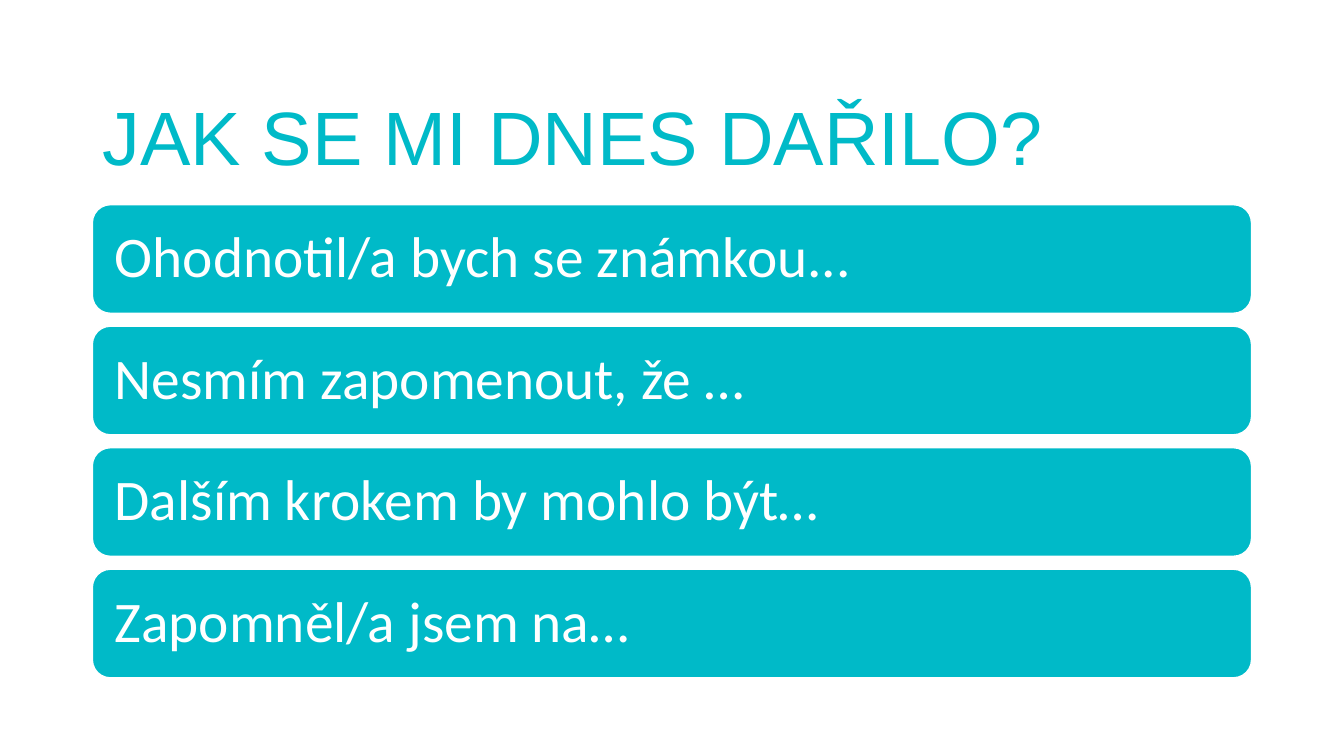
import pptx
import pptx.dml.color
import pptx.enum.shapes
import pptx.enum.text
import pptx.util

Pt = pptx.util.Pt
COLORS = {"teal": "00BAC8", "white": "FFFFFF"}
LEFT, WIDTH = 66, 828
BAR_TOP, BAR_HEIGHT, BAR_STEP = 146.2, 77.6, 86.8
PROMPTS = [
    "Ohodnotil/a bych se známkou...",
    "Nesmím zapomenout, že …",
    "Dalším krokem by mohlo být…",
    "Zapomněl/a jsem na…",
]


def color(name):
    return pptx.dml.color.RGBColor.from_string(COLORS[name])


def write_text(shape, text, font_name, size, color_name, anchor):
    frame = shape.text_frame
    frame.auto_size = pptx.enum.text.MSO_AUTO_SIZE.NONE
    frame.word_wrap = True
    frame.vertical_anchor = anchor
    frame.text = text
    paragraph = frame.paragraphs[0]
    paragraph.alignment = pptx.enum.text.PP_ALIGN.LEFT
    paragraph.line_spacing = 0.9
    paragraph.font.name = font_name
    paragraph.font.size = Pt(size)
    paragraph.font.color.rgb = color(color_name)


def set_title(slide, text):
    title = slide.shapes.title
    title.left, title.top = Pt(LEFT), Pt(28.8)
    title.width, title.height = Pt(WIDTH), Pt(104.4)
    write_text(title, text, "Arial", 54, "teal",
               pptx.enum.text.MSO_ANCHOR.BOTTOM)


def add_prompt_bar(slide, text, top):
    bar = slide.shapes.add_shape(
        pptx.enum.shapes.MSO_SHAPE.ROUNDED_RECTANGLE,
        Pt(LEFT), Pt(top), Pt(WIDTH), Pt(BAR_HEIGHT))
    bar.shadow.inherit = False
    bar.fill.solid()
    bar.fill.fore_color.rgb = color("teal")
    bar.line.color.rgb = color("white")
    bar.line.width = Pt(1)
    # The rounded corners already inset the text by about 4 pt
    bar.text_frame.margin_left = bar.text_frame.margin_right = Pt(12.2)
    write_text(bar, text, "Calibri", 41, "white",
               pptx.enum.text.MSO_ANCHOR.MIDDLE)


def main():
    presentation = pptx.Presentation()
    presentation.slide_width, presentation.slide_height = Pt(960), Pt(540)
    slide = presentation.slides.add_slide(presentation.slide_layouts[5])

    # Heading
    set_title(slide, "JAK SE MI DNES DAŘILO?")

    # Stack of reflection prompts
    for index, prompt in enumerate(PROMPTS):
        add_prompt_bar(slide, prompt, BAR_TOP + index * BAR_STEP)

    presentation.save("out.pptx")


if __name__ == "__main__":
    main()
